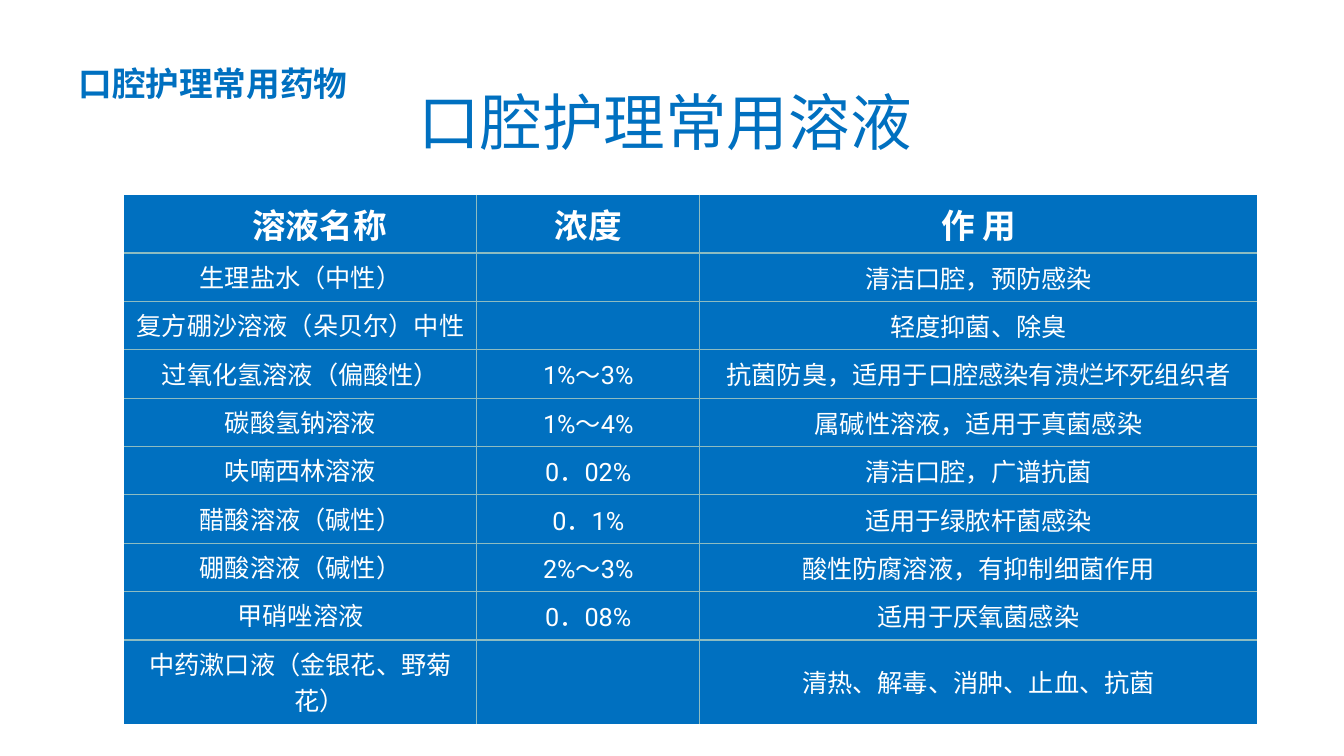
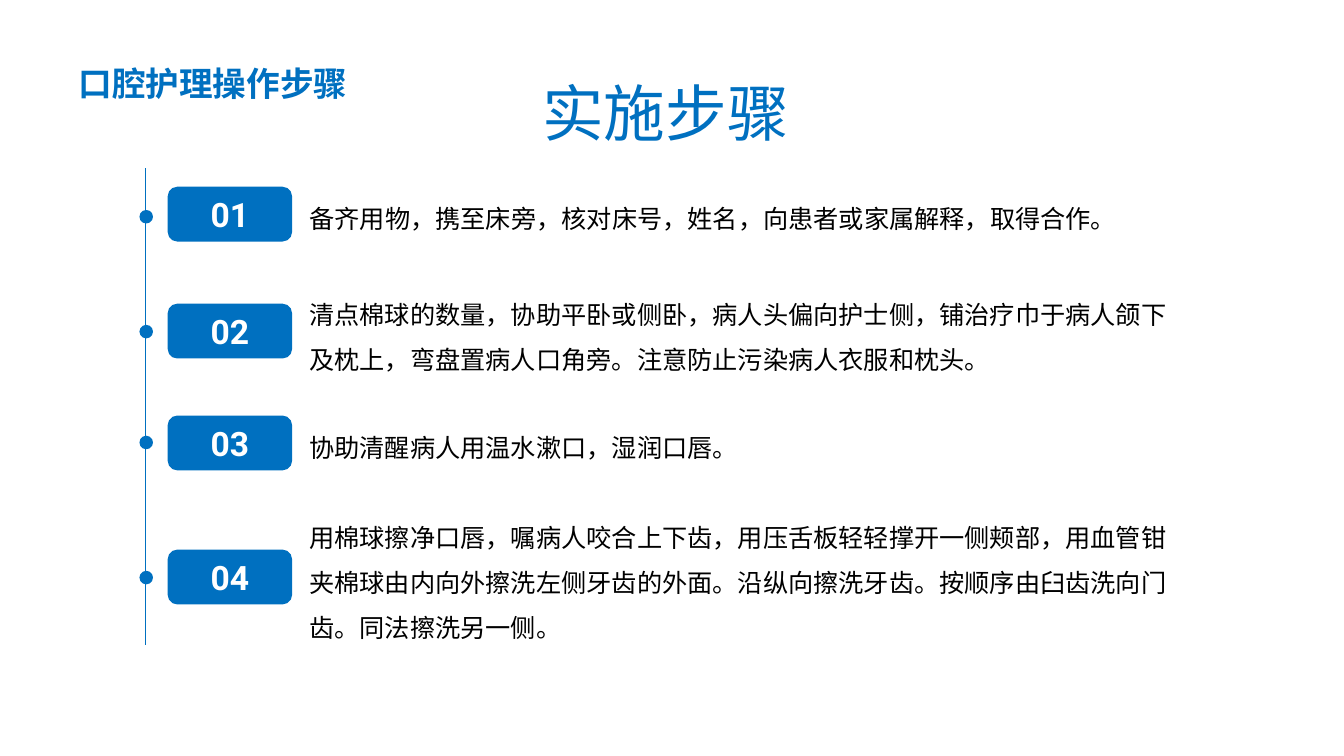
"""Build two slides on mouth care: a table of solutions and a list of steps."""
import dataclasses
import typing

import lxml.etree
import pptx
import pptx.dml.color
import pptx.enum.shapes
import pptx.enum.text
import pptx.oxml.ns
import pptx.util

Inches = pptx.util.Inches
Pt = pptx.util.Pt
qn = pptx.oxml.ns.qn
ALIGN = pptx.enum.text.PP_ALIGN
ANCHOR = pptx.enum.text.MSO_ANCHOR
SIZE = pptx.enum.text.MSO_AUTO_SIZE
SHAPE = pptx.enum.shapes.MSO_SHAPE
LINK = pptx.enum.shapes.MSO_CONNECTOR

HUES = {"blue": "0070C0", "rule": "8DBCC1", "white": "FFFFFF", "black": "000000"}
HAN = "Noto Sans CJK SC"


@dataclasses.dataclass(frozen=True)
class Style:
    hue: str
    font: dict[str, typing.Any]
    para: dict[str, typing.Any]


@dataclasses.dataclass(frozen=True)
class Step:
    text: str
    top: float
    height: float
    tag: float
    dot: float


def face(size: int, bold: bool = False, name: str = "Roboto") -> dict[str, typing.Any]:
    return {"size": Pt(size), "bold": bold, "name": name}


MID = {"alignment": ALIGN.CENTER}
LABEL = Style("blue", face(24, True, HAN), {"line_spacing": 1.5})
TITLE = Style("blue", face(44), {**MID, "line_spacing": 0.9})
BODY = Style("black", face(18),
             {"alignment": ALIGN.LEFT, "line_spacing": 1.5, "space_before": Pt(0)})
TAG = Style("white", face(24, True), MID)
HEAD = TAG
CELL = Style("white", face(18), MID)

COLS = (3.5, 2.21, 5.53)
ROWS = (
    ("溶液名称", "浓度", "作 用"),
    ("生理盐水（中性）", "", "清洁口腔，预防感染"),
    ("复方硼沙溶液（朵贝尔）中性", "", "轻度抑菌、除臭"),
    ("过氧化氢溶液（偏酸性）", "1%～3%", "抗菌防臭，适用于口腔感染有溃烂坏死组织者"),
    ("碳酸氢钠溶液", "1%～4%", "属碱性溶液，适用于真菌感染"),
    ("呋喃西林溶液", "0．02%", "清洁口腔，广谱抗菌"),
    ("醋酸溶液（碱性）", "0．1%", "适用于绿脓杆菌感染"),
    ("硼酸溶液（碱性）", "2%～3%", "酸性防腐溶液，有抑制细菌作用"),
    ("甲硝唑溶液", "0．08%", "适用于厌氧菌感染"),
    ("中药漱口液（金银花、野菊花）", "", "清热、解毒、消肿、止血、抗菌"),
)
TALL = (0.58, *[0.48] * (len(ROWS) - 2), 0.83)
STEPS = (
    Step("备齐用物，携至床旁，核对床号，姓名，向患者或家属解释，取得合作。",
         1.82, 0.6, 1.86, 2.09),
    Step("清点棉球的数量，协助平卧或侧卧，病人头偏向护士侧，铺治疗巾于病人颌下"
         "及枕上，弯盘置病人口角旁。注意防止污染病人衣服和枕头。",
         2.77, 1.03, 3.02, 3.23),
    Step("协助清醒病人用温水漱口，湿润口唇。", 4.09, 0.6, 4.13, 4.33),
    Step("用棉球擦净口唇，嘱病人咬合上下齿，用压舌板轻轻撑开一侧颊部，用血管钳"
         "夹棉球由内向外擦洗左侧牙齿的外面。沿纵向擦洗牙齿。按顺序由臼齿洗向门"
         "齿。同法擦洗另一侧。", 4.98, 1.64, 5.46, 5.67),
)


def paint(name: str) -> pptx.dml.color.RGBColor:
    return pptx.dml.color.RGBColor.from_string(HUES[name])


def apply(item: typing.Any, form: dict[str, typing.Any]) -> None:
    for key, value in form.items():
        setattr(item, key, value)


def write(frame: typing.Any, text: str, style: Style,
          margin: float = 0, indent: float = 0) -> None:
    para = frame.paragraphs[0]
    props = para._p.get_or_add_pPr()
    props.set("marL", str(Inches(margin)))
    props.set("indent", str(Inches(indent)))
    apply(para, style.para)
    lxml.etree.SubElement(props, qn("a:buNone"))
    run = para.add_run()
    run.text = text
    run.font.color.rgb = paint(style.hue)
    apply(run.font, style.font)
    lxml.etree.SubElement(run._r.get_or_add_rPr(), qn("a:ea")).set("typeface", HAN)


def place(item: typing.Any, left: float, top: float, width: float, height: float) -> None:
    apply(item, {"left": Inches(left), "top": Inches(top),
                 "width": Inches(width), "height": Inches(height)})


def start(deck: typing.Any, layout: int, label: str, title: str,
          top: float, height: float) -> typing.Any:
    slide = deck.slides.add_slide(deck.slide_layouts[layout])
    box = slide.shapes.add_textbox(Inches(0.68), Inches(0.37), Inches(2.89), Inches(0.65))
    apply(box.text_frame, {"word_wrap": False, "auto_size": SIZE.SHAPE_TO_FIT_TEXT})
    write(box.text_frame, label, LABEL)
    head = slide.shapes.title
    place(head, 2.42, top, 8.5, height)
    apply(head.text_frame, {"vertical_anchor": ANCHOR.MIDDLE, "auto_size": SIZE.NONE})
    write(head.text_frame, title, TITLE)
    return slide


def edge(cell: typing.Any, sides: dict[str, bool]) -> None:
    props = cell._tc.get_or_add_tcPr()
    for spot, (side, shown) in enumerate(sides.items()):
        line = lxml.etree.Element(qn(f"a:ln{side}"), w=str(Pt(1)))
        if shown:
            fill = lxml.etree.SubElement(line, qn("a:solidFill"))
            lxml.etree.SubElement(fill, qn("a:srgbClr")).set("val", HUES["rule"])
        else:
            lxml.etree.SubElement(line, qn("a:noFill"))
        props.insert(spot, line)


def chart_drugs(slide: typing.Any) -> None:
    table = slide.shapes.add_table(len(ROWS), len(COLS), Inches(1.23), Inches(1.93),
                                   Inches(sum(COLS)), Inches(sum(TALL))).table
    apply(table, {"first_row": False, "horz_banding": False})
    for col, width in zip(table.columns, COLS):
        col.width = Inches(width)
    for y, row in enumerate(ROWS):
        table.rows[y].height = Inches(TALL[y])
        for x, text in enumerate(row):
            cell = table.cell(y, x)
            cell.fill.solid()
            cell.fill.fore_color.rgb = paint("blue")
            cell.vertical_anchor = ANCHOR.MIDDLE if x else ANCHOR.TOP
            if text:
                indent = 0 if x == y == 0 else -0.38
                write(cell.text_frame, text, CELL if y else HEAD, 0.38, indent)
            edge(cell, {"L": x > 0, "R": x < len(COLS) - 1,
                        "T": y > 0, "B": y < len(ROWS) - 1})


def badge(slide: typing.Any, kind: typing.Any, left: float, top: float,
          width: float, height: float) -> typing.Any:
    item = slide.shapes.add_shape(kind, Inches(left), Inches(top),
                                  Inches(width), Inches(height))
    item.shadow.inherit = False
    item.fill.solid()
    item.fill.fore_color.rgb = item.line.color.rgb = paint("blue")
    item.line.width = Pt(1)
    return item


def draw_steps(slide: typing.Any) -> None:
    line = slide.shapes.add_connector(LINK.STRAIGHT, Inches(1.44), Inches(1.67),
                                      Inches(1.44), Inches(6.4))
    line.line.color.rgb = paint("blue")
    line.line.width = Pt(0.5)
    lxml.etree.SubElement(line._element.spPr, qn("a:effectLst"))
    for count, step in enumerate(STEPS, 1):
        if count == 1:
            box = slide.placeholders[1]
        else:
            box = slide.shapes.add_textbox(0, 0, 0, 0)
        place(box, 2.97, step.top, 8.9, step.height)
        apply(box.text_frame, {"word_wrap": True, "auto_size": SIZE.NONE,
                               "vertical_anchor": ANCHOR.TOP})
        write(box.text_frame, step.text, BODY)
        badge(slide, SHAPE.OVAL, 1.39, step.dot, 0.12, 0.12)
        tag = badge(slide, SHAPE.ROUNDED_RECTANGLE, 1.67, step.tag, 1.22, 0.53)
        tag.text_frame.vertical_anchor = ANCHOR.MIDDLE
        write(tag.text_frame, f"{count:02}", TAG)


def main() -> None:
    deck = pptx.Presentation()
    apply(deck, {"slide_width": Inches(13.33), "slide_height": Inches(7.5)})
    chart_drugs(start(deck, 5, "口腔护理常用药物", "口腔护理常用溶液 ", 0.76, 0.97))
    draw_steps(start(deck, 1, "口腔护理操作步骤", "实施步骤 ", 0.84, 0.64))
    deck.save("out.pptx")


if __name__ == "__main__":
    main()
